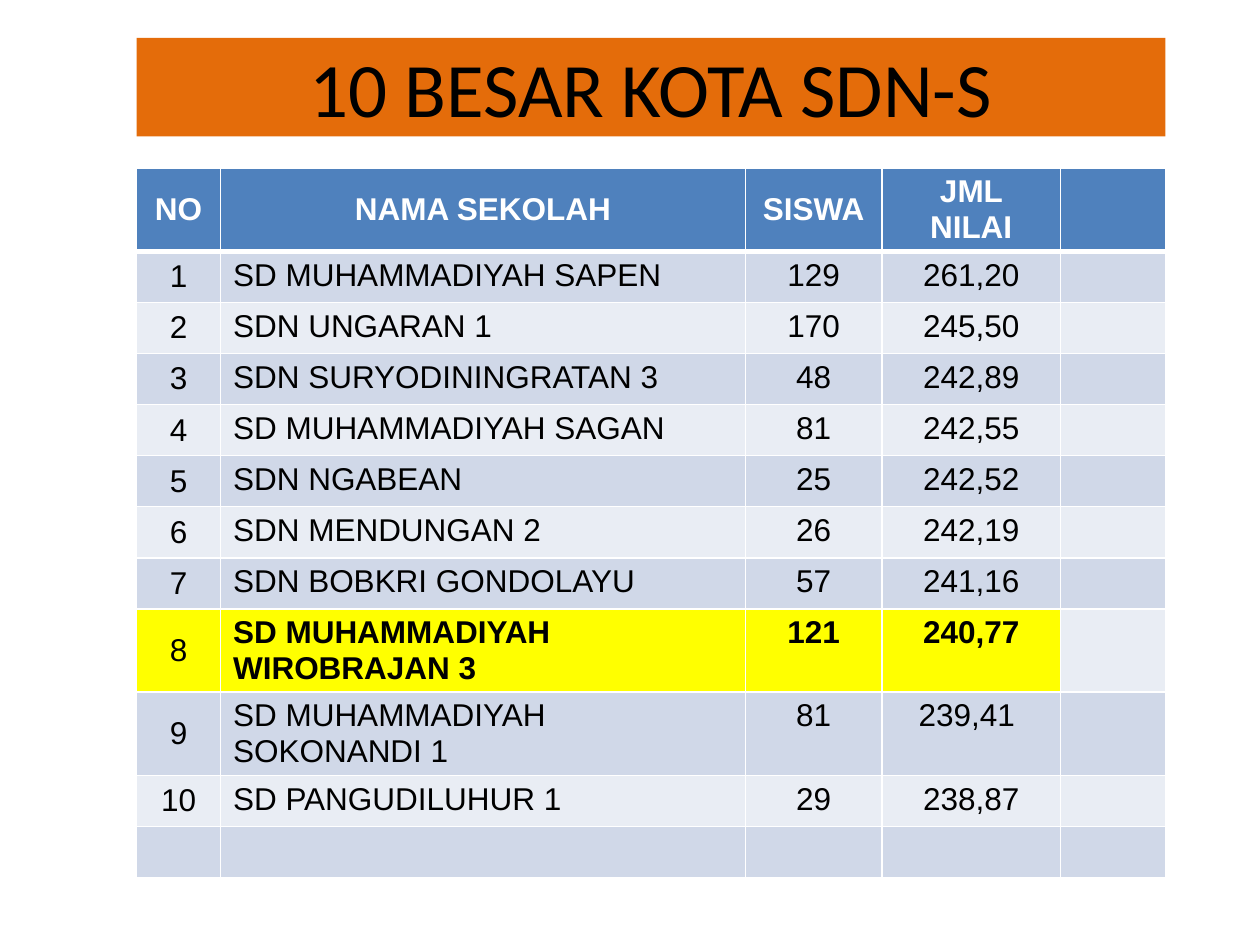
from dataclasses import dataclass

import pptx
import pptx.dml.color
import pptx.enum.shapes
import pptx.enum.text
import pptx.oxml
import pptx.oxml.ns
import pptx.util

ALIGN = pptx.enum.text.PP_ALIGN
ANCHOR = pptx.enum.text.MSO_ANCHOR


@dataclass(frozen=True)
class Theme:
    black: str = "000000"
    white: str = "FFFFFF"
    orange: str = "E46C0A"
    blue: str = "4F81BD"
    bands: tuple = ("D0D8E8", "E9EDF4")
    mark: str = "FFFF00"
    head_font: str = "Calibri"
    body_font: str = "Arial"
    head_size: int = 44
    body_size: int = 18
    thin: int = 1
    thick: int = 3


@dataclass(frozen=True)
class School:
    name: str
    pupils: str
    score: str
    top: bool = False


THEME = Theme()
UNIT = pptx.util.Inches(1) / 12  # grid: twelve columns to the inch
LEFT = 13
COLS = (8, 50, 13, 17, 10)
TABLE_TOP, TABLE_HIGH = 16, 58.3
TITLE_TOP, TITLE_HIGH = 3.6, 9.4
HEADS = ("NO", "NAMA SEKOLAH", "SISWA", "JML NILAI", "")
SCHOOLS = (
    School("SD MUHAMMADIYAH SAPEN", "129", "261,20"),
    School("SDN UNGARAN 1", "170", "245,50"),
    School("SDN SURYODININGRATAN 3", "48", "242,89"),
    School("SD MUHAMMADIYAH SAGAN", "81", "242,55"),
    School("SDN NGABEAN", "25", "242,52"),
    School("SDN MENDUNGAN 2", "26", "242,19"),
    School("SDN BOBKRI GONDOLAYU", "57", "241,16"),
    School("SD MUHAMMADIYAH WIROBRAJAN 3", "121", "240,77", top=True),
    School("SD MUHAMMADIYAH SOKONANDI 1", "81", "239,41 "),
    School("SD PANGUDILUHUR 1", "29", "238,87"),
)


def grid(count: float) -> int:
    return round(count * UNIT)


def rgb(code: str) -> pptx.dml.color.RGBColor:
    return pptx.dml.color.RGBColor.from_string(code)


def paint(item, color: str) -> None:
    item.fill.solid()
    item.fill.fore_color.rgb = rgb(color)


def write(frame, text: str, *, font=THEME.body_font, size=THEME.body_size,
          color=THEME.black, bold=False, align=ALIGN.CENTER) -> None:
    para = frame.paragraphs[0]
    para.alignment = align
    run = para.add_run()
    run.text = text
    run.font.name = font
    run.font.size = pptx.util.Pt(size)
    run.font.bold = bold
    run.font.color.rgb = rgb(color)


def edge(cell, top: int, bottom: int) -> None:
    """Draw white borders; must run before the cell is filled."""
    props = cell._tc.get_or_add_tcPr()
    for side, width in zip("LRTB", (THEME.thin, THEME.thin, top, bottom)):
        props.append(pptx.oxml.parse_xml(
            f'<a:ln{side} {pptx.oxml.ns.nsdecls("a")} w="{pptx.util.Pt(width)}">'
            f'<a:solidFill><a:srgbClr val="{THEME.white}"/></a:solidFill>'
            f'</a:ln{side}>'))


def add_title(slide, text: str) -> None:
    box = slide.shapes.add_shape(
        pptx.enum.shapes.MSO_SHAPE.RECTANGLE, grid(LEFT), grid(TITLE_TOP),
        grid(sum(COLS)), grid(TITLE_HIGH))
    box.shadow.inherit = False
    paint(box, THEME.orange)
    box.line.fill.background()
    box.text_frame.word_wrap = True
    box.text_frame.vertical_anchor = ANCHOR.MIDDLE
    write(box.text_frame, text, font=THEME.head_font, size=THEME.head_size)


def fill_cell(cell, text: str, row: int, col: int, top: bool) -> None:
    head = row == 0
    edge(cell, THEME.thick if row == 1 else THEME.thin,
         THEME.thick if head else THEME.thin)
    if head:
        color = THEME.blue
    elif top and col < len(COLS) - 1:
        color = THEME.mark
    else:
        color = THEME.bands[(row - 1) % 2]
    paint(cell, color)
    if head or col == 0:
        cell.vertical_anchor = ANCHOR.MIDDLE
    if text:
        write(cell.text_frame, text,
              color=THEME.white if head else THEME.black,
              bold=head or (top and col > 0),
              align=ALIGN.LEFT if col == 1 and not head else ALIGN.CENTER)


def add_ranks(slide) -> None:
    ranks = [(str(rank), s.name, s.pupils, s.score, "")
             for rank, s in enumerate(SCHOOLS, 1)]
    rows = [HEADS, *ranks, ("",) * len(COLS)]
    tops = [False, *(s.top for s in SCHOOLS), False]
    table = slide.shapes.add_table(
        len(rows), len(COLS), grid(LEFT), grid(TABLE_TOP),
        grid(sum(COLS)), grid(TABLE_HIGH)).table
    for col, width in zip(table.columns, COLS):
        col.width = grid(width)
    for r, (texts, top) in enumerate(zip(rows, tops)):
        for c, text in enumerate(texts):
            fill_cell(table.cell(r, c), text, r, c, top)


def main() -> None:
    deck = pptx.Presentation()
    deck.slide_width = pptx.util.Inches(10)
    deck.slide_height = pptx.util.Inches(7.5)
    slide = deck.slides.add_slide(deck.slide_layouts[6])
    add_title(slide, "10 BESAR KOTA SDN-S")
    add_ranks(slide)
    deck.save("out.pptx")


if __name__ == "__main__":
    main()
